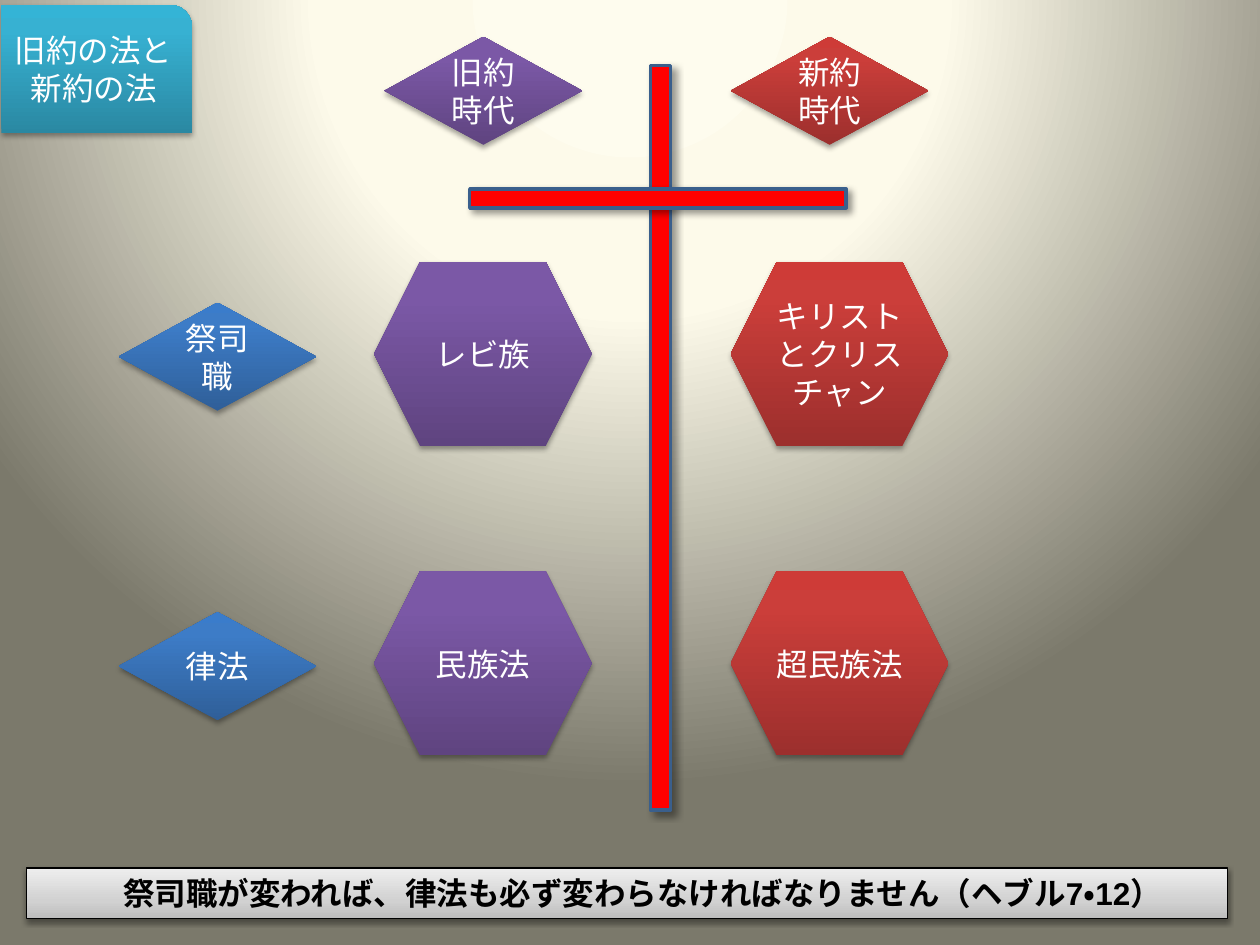
from pptx import Presentation
from pptx.dml.color import RGBColor
from pptx.enum.lang import MSO_LANGUAGE_ID
from pptx.enum.shapes import MSO_SHAPE
from pptx.enum.text import MSO_ANCHOR, PP_ALIGN
from pptx.oxml import parse_xml
from pptx.oxml.ns import nsdecls, qn
from pptx.util import Cm, Pt

TITLE = ["旧約の法と", "新約の法"]
ERAS = ["旧約時代", "新約時代"]
TOPICS = [
    ("祭司職", ["レビ族", "キリストとクリスチャン"]),
    ("律法", ["民族法", "超民族法"]),
]
VERSE = "祭司職が変われば、律法も必ず変わらなければなりません（ヘブル7・12）"

PURPLE = [(0, "5F4480"), (80, "7B58A6"), (100, "7C57A8")]
RED = [(0, "9C2F2D"), (80, "CB3E3A"), (100, "CE3B37")]
BLUE = [(0, "2F5F99"), (80, "3D7CC7"), (100, "3A7CCB")]
TEAL = [(0, "2A88A2"), (80, "37B1D2"), (100, "34B4D6")]
GREY = [(0, "BDBDBD"), (35, "D1D1D1"), (100, "EEEEEE")]
GLOW = [(0, "FEFCEE"), (40, "FDFAEA"), (100, "7B796B")]
UPWARD = '<a:lin ang="16200000" scaled="0"/>'
FROM_TOP = ('<a:path path="circle"><a:fillToRect l="50000" t="-80000" '
            'r="50000" b="180000"/></a:path>')

ERA_COLORS = [PURPLE, RED]
ERA_LEFTS = [7.75, 14.73]
LAW_LEFTS = [7.54, 14.73]
TOPIC_LEFT = 2.39
ERA_TOP, FIRST_TOPIC_TOP, FIRST_LAW_TOP, ROW_PITCH = 0.74, 6.1, 5.28, 6.24
DIAMOND = (3.99, 2.18)
HEXAGON = (4.39, 3.71)
CROSS_BEAMS = [(13.11, 1.32, 0.41, 15.01), (9.47, 3.81, 7.59, 0.38)]
TITLE_BOX = (0.03, 0.1, 3.84, 2.59)
VERSE_BOX = (0.53, 17.5, 24.21, 1.02)
SOFT_SHADOW = (35, 3.1, 1.8, 90)
VERSE_SHADOW = (38, 3.1, 1.6, 90)
CROSS_SHADOW = (40, 4, 3, 45)


def color(value):
    return RGBColor.from_string(value)


def set_gradient(fill, holder, stops, direction):
    fill.gradient()
    marks = "".join(
        f'<a:gs pos="{position * 1000}"><a:srgbClr val="{value}"/></a:gs>'
        for position, value in stops)
    holder.replace(holder.find(qn("a:gradFill")), parse_xml(
        f'<a:gradFill {nsdecls("a")} rotWithShape="1">'
        f"<a:gsLst>{marks}</a:gsLst>{direction}</a:gradFill>"))


def add_shadow(shape, opacity, blur, distance, angle):
    shape.shadow.inherit = False
    shape.element.spPr.find(qn("a:effectLst")).append(parse_xml(
        f'<a:outerShdw {nsdecls("a")} blurRad="{Pt(blur)}" dist="{Pt(distance)}" '
        f'dir="{angle * 60000}" rotWithShape="0"><a:srgbClr val="000000">'
        f'<a:alpha val="{opacity * 1000}"/></a:srgbClr></a:outerShdw>'))


def add_block(slide, kind, box, fill, shadow=SOFT_SHADOW, line=None, weight=0):
    block = slide.shapes.add_shape(kind, *map(Cm, box))
    if isinstance(fill, str):
        block.fill.solid()
        block.fill.fore_color.rgb = color(fill)
    else:
        set_gradient(block.fill, block.element.spPr, fill, UPWARD)
    if line:
        block.line.color.rgb = color(line)
        block.line.width = Pt(weight)
    else:
        block.line.fill.background()
    add_shadow(block, *shadow)
    return block


def write(block, *lines, font="Calibri", ink="FFFFFF", bold=False):
    frame = block.text_frame
    frame.word_wrap = True
    frame.vertical_anchor = MSO_ANCHOR.MIDDLE
    for index, line in enumerate(lines):
        paragraph = frame.add_paragraph() if index else frame.paragraphs[0]
        paragraph.alignment = PP_ALIGN.CENTER
        run = paragraph.add_run()
        run.text = line
        run.font.name = font
        run.font.size = Pt(18)
        run.font.bold = bold
        run.font.color.rgb = color(ink)
        run.font.language_id = MSO_LANGUAGE_ID.JAPANESE


def main():
    """Build the slide comparing the old and new covenant laws."""
    deck = Presentation()
    deck.slide_width, deck.slide_height = Cm(25.4), Cm(19.05)
    slide = deck.slides.add_slide(deck.slide_layouts[6])
    backdrop = slide.background.fill
    backdrop.solid()
    set_gradient(backdrop, slide.element.find(".//" + qn("p:bgPr")), GLOW, FROM_TOP)

    for beam in CROSS_BEAMS:
        add_block(slide, MSO_SHAPE.RECTANGLE, beam, "FF0000",
                  CROSS_SHADOW, "3A5F8C", 2)

    for era, left, shades in zip(ERAS, ERA_LEFTS, ERA_COLORS):
        write(add_block(slide, MSO_SHAPE.DIAMOND, (left, ERA_TOP, *DIAMOND), shades), era)

    for row, (topic, laws) in enumerate(TOPICS):
        drop = row * ROW_PITCH
        topic_box = (TOPIC_LEFT, FIRST_TOPIC_TOP + drop, *DIAMOND)
        write(add_block(slide, MSO_SHAPE.DIAMOND, topic_box, BLUE), topic)
        for law, left, shades in zip(laws, LAW_LEFTS, ERA_COLORS):
            law_box = (left, FIRST_LAW_TOP + drop, *HEXAGON)
            write(add_block(slide, MSO_SHAPE.HEXAGON, law_box, shades), law)

    verse = add_block(slide, MSO_SHAPE.RECTANGLE, VERSE_BOX, GREY,
                      VERSE_SHADOW, "000000", 0.75)
    verse.text_frame.margin_left = Cm(0.89)
    write(verse, VERSE, font="Arial", ink="000000", bold=True)

    write(add_block(slide, MSO_SHAPE.ROUND_1_RECTANGLE, TITLE_BOX, TEAL), *TITLE)
    deck.save("out.pptx")


if __name__ == "__main__":
    main()
